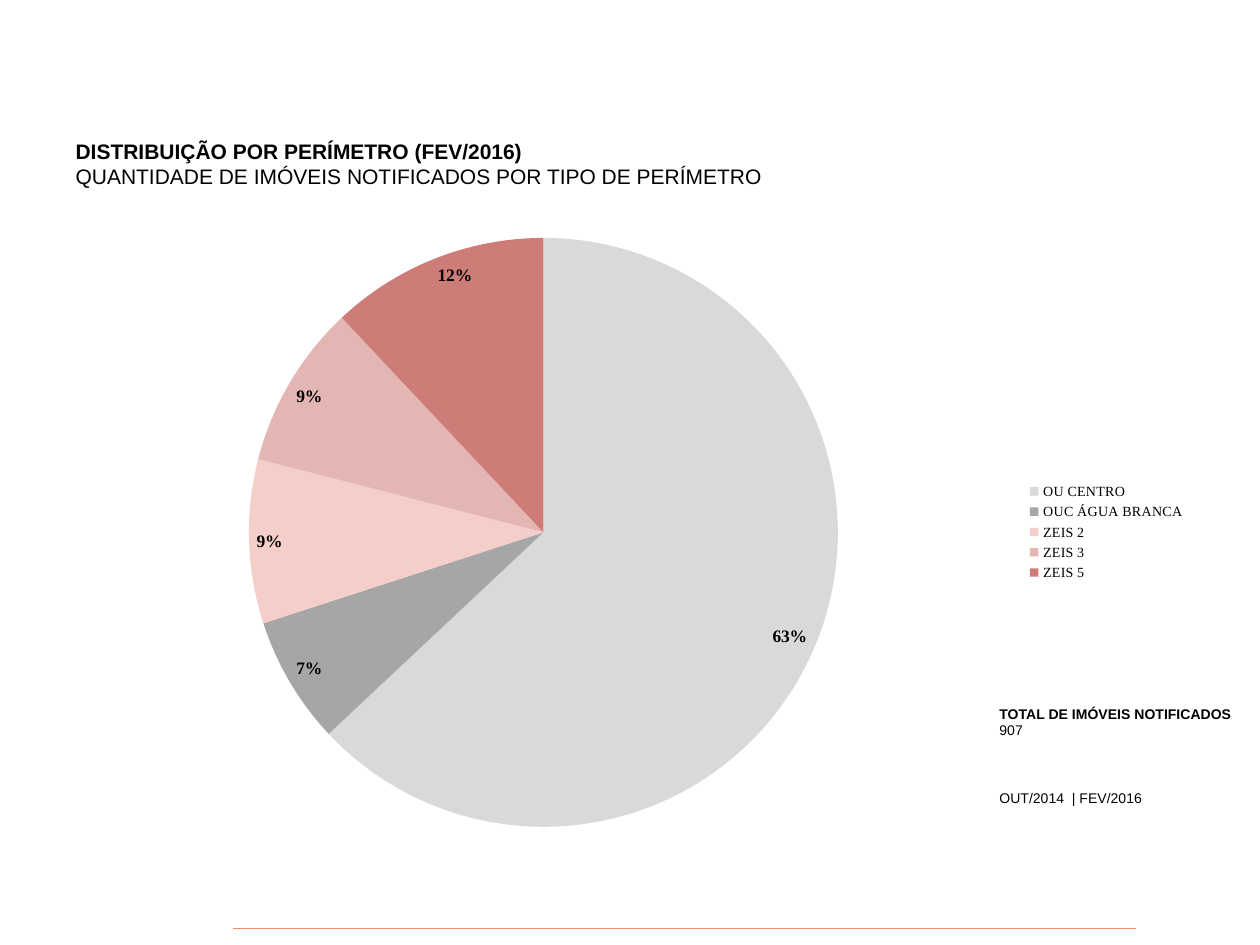
from dataclasses import dataclass

from lxml import etree
from pptx import Presentation
from pptx import util as u
from pptx.chart.data import CategoryChartData
from pptx.dml.color import RGBColor
from pptx.enum import chart as ch
from pptx.enum import shapes, text
from pptx.oxml import parse_xml
from pptx.oxml.ns import nsdecls, qn


@dataclass(frozen=True)
class Theme:
    sans: str = "Arial"
    serif: str = "Times New Roman"
    ink: str = "000000"
    rule: str = "EF8C6A"
    title: int = 12
    label: int = 10
    small: int = 8


T = Theme()
PX = 914400 / 126
PERIMETERS = [
    ("OU CENTRO", 63, "D9D9D9"),
    ("OUC ÁGUA BRANCA", 7, "A6A6A6"),
    ("ZEIS 2", 9, "F4CEC9"),
    ("ZEIS 3", 9, "E3B5B3"),
    ("ZEIS 5", 12, "CE7C78"),
]


def emu(*lengths):
    return [u.Emu(round(n * PX)) for n in lengths]


def style(font, name, size, bold=False):
    font.name, font.size, font.bold = name, u.Pt(size), bold
    font.color.rgb = RGBColor.from_string(T.ink)


def set_layout(part, box, frame, inner=False):
    """Fix a chart part at box, in px within the chart's frame."""
    for old in part.findall(qn("c:layout")):
        part.remove(old)
    layout = parse_xml(f"<c:layout {nsdecls('c')}><c:manualLayout/></c:layout>")
    values = [("layoutTarget", "inner")] if inner else []
    values += [("xMode", "edge"), ("yMode", "edge")]
    values += [(key, f"{box[i] / frame[i % 2]:.4f}") for i, key in enumerate("xywh")]
    for key, value in values:
        etree.SubElement(layout[0], qn(f"c:{key}")).set("val", value)
    if inner:
        part.insert(0, layout)
    else:
        part.find(qn("c:legendPos")).addnext(layout)


def add_heading(s, x, y, w, h):
    sp = s.shapes.title
    sp.left, sp.top, sp.width, sp.height = emu(x, y, w, h)
    tf = sp.text_frame
    tf.auto_size = text.MSO_AUTO_SIZE.NONE
    tf.vertical_anchor = text.MSO_ANCHOR.BOTTOM
    p = tf.paragraphs[0]
    p.alignment = text.PP_ALIGN.LEFT
    r = p.add_run()
    r.text = "DISTRIBUIÇÃO POR PERÍMETRO (FEV/2016)"
    style(r.font, T.sans, T.title, True)
    p.add_line_break()
    r = p.add_run()
    r.text = "QUANTIDADE DE IMÓVEIS NOTIFICADOS POR TIPO DE PERÍMETRO"
    style(r.font, T.sans, T.title)


def add_pie(s, x, y, w, h):
    names, values, colors = zip(*PERIMETERS)
    data = CategoryChartData()
    data.categories = names
    data.add_series("Series 1", values)
    chart = s.shapes.add_chart(ch.XL_CHART_TYPE.PIE, *emu(x, y, w, h), data).chart
    chart.has_title = False
    style(chart.font, T.serif, T.label)

    plot = chart.plots[0]
    plot.vary_by_categories = True
    for i, color in enumerate(colors):
        fill = plot.series[0].points[i].format.fill
        fill.solid()
        fill.fore_color.rgb = RGBColor.from_string(color)

    labels = plot.series[0].data_labels
    labels.show_percentage, labels.show_value = True, False
    labels.number_format, labels.number_format_is_linked = "0%", False
    labels.position = ch.XL_LABEL_POSITION.INSIDE_END
    style(labels.font, T.serif, T.label, True)

    chart.has_legend = True
    legend = chart.legend
    legend.position = ch.XL_LEGEND_POSITION.RIGHT
    legend.include_in_layout = False
    style(legend.font, T.serif, T.small)

    plot_area = chart.element.find(".//" + qn("c:plotArea"))
    legend_part = chart.element.find(".//" + qn("c:legend"))
    set_layout(plot_area, (186, 18, 589, 589), (w, h), inner=True)
    set_layout(legend_part, (961, 259, 165, 106), (w, h))


def add_total(s, x, y, w, h):
    tf = s.shapes.add_textbox(*emu(x, y, w, h)).text_frame
    tf.word_wrap = False
    lines = [
        ("TOTAL DE IMÓVEIS NOTIFICADOS", True, 0),
        ("907", False, 0),
        ("OUT/2014  | FEV/2016", False, 29),
    ]
    for i, (line, bold, gap) in enumerate(lines):
        p = tf.add_paragraph() if i else tf.paragraphs[0]
        p.text = line
        style(p.font, T.sans, T.small, bold)
        if gap:
            p.space_before = u.Pt(gap)


def add_footer_rule(s, x, y, w):
    line = s.shapes.add_connector(shapes.MSO_CONNECTOR.STRAIGHT, *emu(x, y, x + w, y))
    line.line.color.rgb = RGBColor.from_string(T.rule)
    line.line.width = u.Pt(0.5)
    etree.SubElement(line.element.spPr, qn("a:effectLst"))


def main():
    prs = Presentation()
    prs.slide_width, prs.slide_height = emu(1260, 945)
    s = prs.slides.add_slide(prs.slide_layouts[5])
    add_footer_rule(s, 233, 928, 903)
    add_heading(s, 63, 38, 1134, 157)
    add_pie(s, 63, 220, 1134, 624)
    add_total(s, 987, 699, 258, 142)
    prs.save("out.pptx")


if __name__ == "__main__":
    main()
